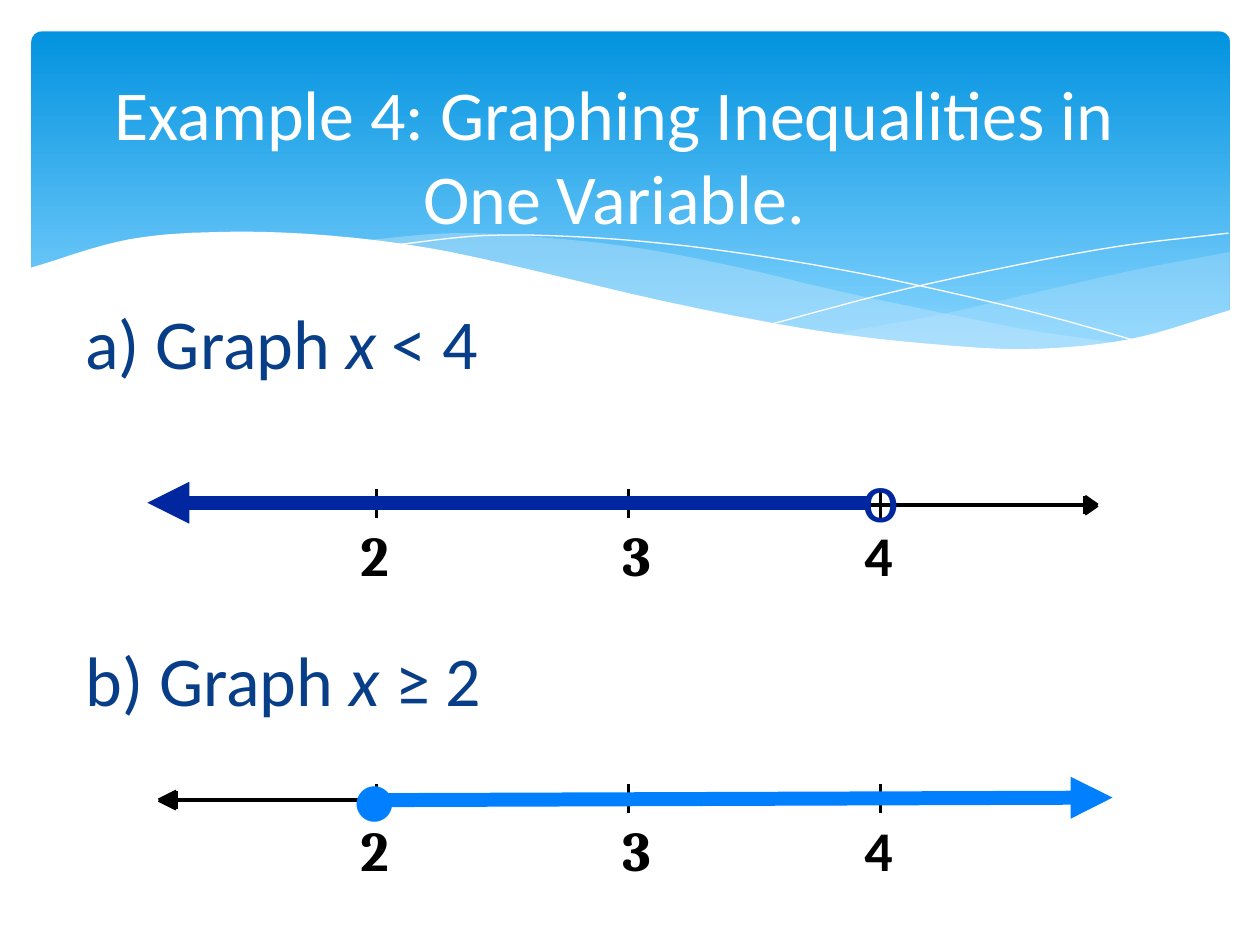
import pptx
import pptx.util
import pptx.dml.color
import pptx.enum.shapes
import pptx.enum.text
import pptx.oxml.ns
import lxml.etree

Pt = pptx.util.Pt
qn = pptx.oxml.ns.qn
align = pptx.enum.text.PP_ALIGN
kinds = pptx.enum.shapes

deck = pptx.Presentation()
deck.slide_width = pptx.util.Inches(10)
deck.slide_height = pptx.util.Inches(7.5)
unit = deck.slide_width / 10
slide = deck.slides.add_slide(deck.slide_layouts[5])
shapes = slide.shapes

white, black, navy = "FFFFFF", "000000", "073E87"
mist, deep, sky = "C6E7FC", "00279F", "0080FF"


def tone(code):
    return pptx.dml.color.RGBColor.from_string(code)


def grid(*cells):
    return [round(cell * unit) for cell in cells]


panel = shapes.add_shape(kinds.MSO_SHAPE.ROUNDED_RECTANGLE, *grid(0.25, 0.25, 9.51, 2.7))
panel.adjustments[0] = 0.03
panel.shadow.inherit = False
panel.line.fill.background()
panel.fill.gradient()
panel.fill.gradient_angle = 270
for stop, code, share in zip(panel.fill.gradient_stops, ("0293E0", "83D3FE"), (0, 0.9)):
    stop.color.rgb = tone(code)
    stop.position = share

# left, right, fill, opacity, then heights at equal steps along each edge
waves = [
    (6.61, 9.76, mist, 29, [[2.65, 2.51, 2.33, 2.15, 2], [2.65, 2.75, 2.78, 2.7, 2.47]]),
    (2.86, 8.93, mist, 40, [[1.91, 1.85, 1.89, 1.98, 2.13, 2.31, 2.47, 2.62, 2.73],
                            [1.91, 2.03, 2.19, 2.37, 2.53, 2.66, 2.75, 2.78, 2.73]]),
    (3.09, 9.07, None, 100, [[1.95, 1.87, 1.88, 1.94, 2.04, 2.17, 2.33, 2.51, 2.72]]),
    (6.13, 9.75, None, 100, [[2.57, 2.33, 2.13, 1.96, 1.85]]),
    (0.23, 9.77, white, 100, [[2.13, 1.9, 1.84, 1.87, 1.97, 2.14, 2.33, 2.5, 2.64, 2.73,
                               2.77, 2.69, 2.46], [3.29, 3.29]]),
]
outlines = []
for left, right, fill, alpha, edges in waves:
    points = []
    for edge in edges:
        spans = len(edge) - 1
        knots = [2 * edge[0] - edge[1], *edge, 2 * edge[-1] - edge[-2]]
        curve = []
        for step in range(8 * spans + 1):
            span = min(step // 8, spans - 1)
            t = step / 8 - span
            a, b, c, d = knots[span:span + 4]
            y = b + t / 2 * (c - a + t * (2 * a - 5 * b + 4 * c - d
                                          + t * (3 * (b - c) + d - a)))
            curve.append((left + (right - left) * step / (8 * spans), y))
        points += curve if edge is edges[0] else curve[::-1]
    outlines.append((points, fill, alpha))

axes = {"a": 4.01, "b": 6.35}
ticks = (2.99, 4.99, 6.99)
heads = ((8.61, 8.71), (1.4, 1.26))
lines = []
for mid in axes.values():
    lines.append(((1.36, mid, 8.61, mid), black, 2))
    for base, tip in heads:
        corners = [(base, mid - 0.07), (base, mid + 0.07), (tip, mid)]
        outlines.append((corners, black, 100))
        for start, end in zip(corners, corners[1:] + corners[:1]):
            lines.append(((*start, *end), black, 2))
    for tick in ticks:
        lines.append(((tick, mid + 0.1, tick, mid - 0.13), black, 2))
lines.append(((6.91, 3.99, 1.17, 3.99), deep, 8))
lines.append(((3.08, 6.35, 8.83, 6.33), sky, 8))

for points, fill, alpha in outlines:
    dots = [(round(x * 1000), round(y * 1000)) for x, y in points]
    pen = shapes.build_freeform(*dots[0], scale=unit / 1000)
    pen.add_line_segments(dots[1:], close=fill is not None)
    form = pen.convert_to_shape()
    form.shadow.inherit = False
    if fill is None:
        form.fill.background()
        form.line.color.rgb = tone(white)
        form.line.width = Pt(0)
        continue
    form.fill.solid()
    form.fill.fore_color.rgb = tone(fill)
    form.line.fill.background()
    if alpha < 100:
        shade = form._element.spPr.find(".//" + qn("a:srgbClr"))
        lxml.etree.SubElement(shade, qn("a:alpha"), val=str(alpha * 1000))

for ends, code, width in lines:
    line = shapes.add_connector(kinds.MSO_CONNECTOR.STRAIGHT, *grid(*ends))
    line.line.color.rgb = tone(code)
    line.line.width = Pt(width)
    if width == 8:
        lxml.etree.SubElement(line.line._get_or_add_ln(), qn("a:tailEnd"), type="triangle")
    lxml.etree.SubElement(line._element.spPr, qn("a:effectLst"))

title = shapes.title
shapes._spTree.append(title._element)
title.left, title.top, title.width, title.height = grid(0.75, 0.5, 8.25, 1.45)
title.text_frame.text = "Example 4: Graphing Inequalities in One Variable."
title.text_frame.vertical_anchor = pptx.enum.text.MSO_ANCHOR.MIDDLE
title.text_frame.paragraphs[0].alignment = align.CENTER
font = title.text_frame.paragraphs[0].runs[0].font
font.name, font.size, font.color.rgb = "Calibri", Pt(40), tone(white)

texts = [
    (["a) Graph ", "x", " < 4"], (0.58, 2.33, 8.25, 0.77), "Calibri", 40, navy),
    (["b) Graph ", "x", " ≥ 2"], (0.58, 5, 8.25, 0.77), "Calibri", 40, navy),
    (["o"], (6.75, 3.54, 0.48, 0.77), "Calibri", 40, deep),
    (["●"], (2.69, 5.9, 0.57, 0.83), "Calibri", 44, sky),
]
for mid in axes.values():
    for digit, left, face in (("2", 2.86, "Cambria"), ("3", 4.94, "Cambria"),
                              ("4", 6.86, "Calibri")):
        texts.append(([digit], (left, mid + 0.12, 0.22, 0.53), face, 32, black))

for parts, place, face, size, code in texts:
    frame = shapes.add_textbox(*grid(*place)).text_frame
    frame.word_wrap = len(parts) > 1
    label = code == black
    for part in parts:
        run = frame.paragraphs[0].add_run()
        run.text = part
        run.font.name, run.font.size = face, Pt(size)
        run.font.color.rgb = tone(code)
        run.font.bold = label
        run.font.italic = part == "x"
    if label:
        frame.paragraphs[0].alignment = align.CENTER
        frame.margin_left = frame.margin_right = 0
        frame.margin_top = frame.margin_bottom = 0

deck.save("out.pptx")
